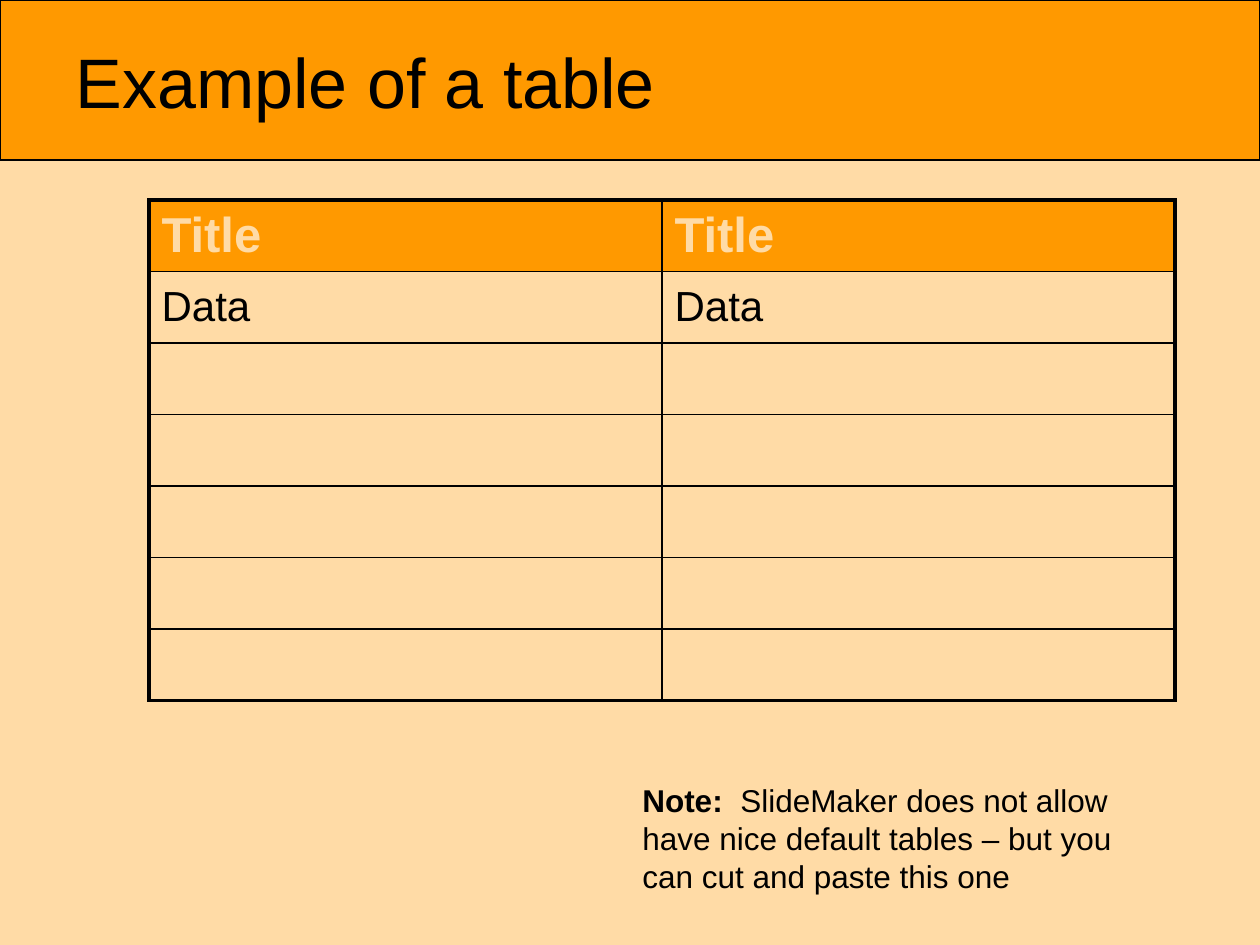
"""Builds a slide with a banner title, a ruled two-column table and a note."""
from lxml import etree
from pptx import Presentation
from pptx.dml.color import RGBColor
from pptx.enum.shapes import MSO_SHAPE
from pptx.enum.text import MSO_ANCHOR, MSO_AUTO_SIZE, PP_ALIGN
from pptx.oxml.ns import qn
from pptx.util import Emu, Pt

RECTANGLE = MSO_SHAPE.RECTANGLE
MIDDLE = MSO_ANCHOR.MIDDLE
GROW = MSO_AUTO_SIZE.SHAPE_TO_FIT_TEXT
LEFT = PP_ALIGN.LEFT

PX = 914400 // 126
WIDTH, HEIGHT = 1260, 945
TITLE_ONLY = 5

BLACK = RGBColor(0x00, 0x00, 0x00)
ORANGE = RGBColor(0xFF, 0x99, 0x00)
PEACH = RGBColor(0xFF, 0xDB, 0xA6)

HEADINGS = ["Title", "Title"]
ROWS = [["Data", "Data"]] + [["", ""]] * 5


def px(*lengths):
    return [Emu(length * PX) for length in lengths]


class SlideBuilder:
    font_name = "Arial"
    thin, thick = Pt(1), Pt(2.25)

    def __init__(self, presentation):
        self.slide = presentation.slides.add_slide(presentation.slide_layouts[TITLE_ONLY])
        background = self.slide.background.fill
        background.solid()
        background.fore_color.rgb = PEACH

    def style(self, paragraph, size, color=BLACK, bold=False):
        paragraph.alignment = LEFT
        for run in paragraph.runs:
            run.font.name = self.font_name
            run.font.size = Pt(size)
            run.font.bold = bold
            run.font.color.rgb = color

    def banner(self, *box):
        band = self.slide.shapes.add_shape(RECTANGLE, *px(*box))
        band.shadow.inherit = False
        band.fill.solid()
        band.fill.fore_color.rgb = ORANGE
        band.line.color.rgb = BLACK
        band.line.width = Pt(0.75)
        self.slide.shapes.title.element.addprevious(band.element)

    def title(self, text, *box):
        heading = self.slide.shapes.title
        heading.left, heading.top, heading.width, heading.height = px(*box)
        frame = heading.text_frame
        frame.text = text
        frame.vertical_anchor = MIDDLE
        self.style(frame.paragraphs[0], 40)

    def border(self, cell, side, width):
        properties = cell._tc.get_or_add_tcPr()
        edge = etree.SubElement(properties, qn(f"a:ln{side}"), w=str(width))
        paint = etree.SubElement(edge, qn("a:solidFill"))
        etree.SubElement(paint, qn("a:srgbClr"), val=str(BLACK))

    def table(self, headings, rows, *box):
        records = [headings] + rows
        last_row, last_column = len(records) - 1, len(headings) - 1
        grid = self.slide.shapes.add_table(len(records), len(headings), *px(*box)).table
        grid.first_row = grid.horz_banding = False
        for r, record in enumerate(records):
            for c, text in enumerate(record):
                cell = grid.cell(r, c)
                outer = {"L": c == 0, "R": c == last_column, "T": r == 0, "B": r == last_row}
                for side, is_outer in outer.items():
                    self.border(cell, side, self.thick if is_outer else self.thin)
                cell.vertical_anchor = MIDDLE
                cell.text_frame.text = text
                paragraph = cell.text_frame.paragraphs[0]
                if r == 0:
                    cell.fill.solid()
                    cell.fill.fore_color.rgb = ORANGE
                    self.style(paragraph, 28, PEACH, bold=True)
                else:
                    cell.fill.background()
                    self.style(paragraph, 24)

    def note(self, label, text, *box):
        frame = self.slide.shapes.add_textbox(*px(*box)).text_frame
        frame.word_wrap = True
        frame.auto_size = GROW
        paragraph = frame.paragraphs[0]
        paragraph.text = label
        paragraph.add_run().text = text
        self.style(paragraph, 18)
        paragraph.runs[0].font.bold = True


def main():
    presentation = Presentation()
    presentation.slide_width, presentation.slide_height = px(WIDTH, HEIGHT)
    builder = SlideBuilder(presentation)
    builder.banner(0, 0, WIDTH, 160)
    builder.title("Example of a table", 63, 26, 1118, 110)
    builder.table(HEADINGS, ROWS, 149, 200, 1026, 501)
    builder.note(
        "Note:  ",
        "SlideMaker does not allow have nice default tables – but you can cut and paste this one",
        630, 775, 530, 126,
    )
    presentation.save("out.pptx")


if __name__ == "__main__":
    main()
